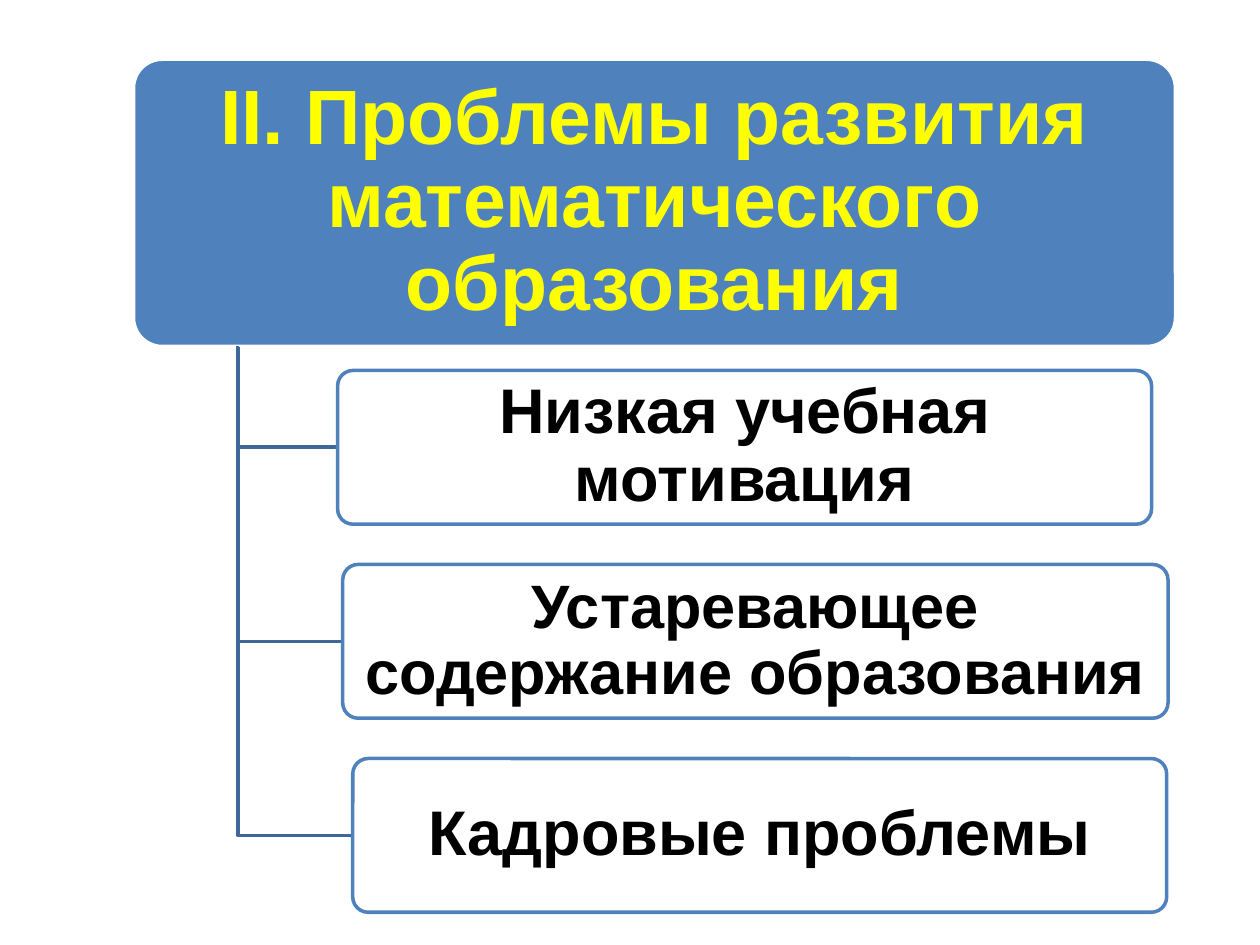
import lxml.etree
import pptx
import pptx.dml.color
import pptx.enum.shapes
import pptx.enum.text
import pptx.oxml.ns
import pptx.util

Inches = pptx.util.Inches
Pt = pptx.util.Pt

COLORS = {
    "white": "FFFFFF",
    "blue": "4F81BD",
    "dark_blue": "3F6797",
    "yellow": "FFFF00",
    "black": "000000",
}


def rgb(name):
    return pptx.dml.color.RGBColor.from_string(COLORS[name])


class ProblemTree:
    font_name = "Arial"
    line_width = Pt(2)
    corner = 0.1
    line_spacing = 0.9

    def __init__(self, presentation):
        self.slide = presentation.slides.add_slide(presentation.slide_layouts[6])

    def outline(self, shape, color):
        shape.shadow.inherit = False
        shape.line.color.rgb = rgb(color)
        shape.line.width = self.line_width

    def box(self, bounds, text, size, fill, line, color, margins, opacity=100):
        shape = self.slide.shapes.add_shape(
            pptx.enum.shapes.MSO_SHAPE.ROUNDED_RECTANGLE,
            *(Inches(length) for length in bounds),
        )
        shape.adjustments[0] = self.corner
        shape.fill.solid()
        shape.fill.fore_color.rgb = rgb(fill)
        if opacity < 100:
            color_element = shape.fill._xPr.find(".//" + pptx.oxml.ns.qn("a:srgbClr"))
            lxml.etree.SubElement(
                color_element, pptx.oxml.ns.qn("a:alpha"), val=str(opacity * 1000)
            )
        self.outline(shape, line)

        horizontal, vertical = (Inches(margin) for margin in margins)
        frame = shape.text_frame
        frame_format = {
            "word_wrap": True,
            "vertical_anchor": pptx.enum.text.MSO_ANCHOR.MIDDLE,
            "margin_left": horizontal,
            "margin_right": horizontal,
            "margin_top": vertical,
            "margin_bottom": vertical,
        }
        for name, value in frame_format.items():
            setattr(frame, name, value)

        paragraph = frame.paragraphs[0]
        paragraph.alignment = pptx.enum.text.PP_ALIGN.CENTER
        paragraph.line_spacing = self.line_spacing
        run = paragraph.add_run()
        run.text = text
        font_format = {"name": self.font_name, "size": Pt(size), "bold": True}
        for name, value in font_format.items():
            setattr(run.font, name, value)
        run.font.color.rgb = rgb(color)

    def branch(self, left, top, right, bottom):
        builder = self.slide.shapes.build_freeform(Inches(left), Inches(top))
        corners = [(left, bottom), (right, bottom)]
        builder.add_line_segments(
            [(Inches(x), Inches(y)) for x, y in corners], close=False
        )
        shape = builder.convert_to_shape()
        shape.fill.background()
        self.outline(shape, "dark_blue")


def main():
    presentation = pptx.Presentation()
    presentation.slide_width = Inches(10)
    presentation.slide_height = Inches(7.5)
    tree = ProblemTree(presentation)

    title_left, title_top, title_width, title_height = 1.06, 0.47, 8.27, 2.28
    tree.box(
        (title_left, title_top, title_width, title_height),
        "II. Проблемы развития математического образования",
        44, "blue", "white", "yellow", (0.09, 0.06),
    )

    trunk_left = title_left + title_width / 10
    trunk_top = title_top + title_height
    first_top, pitch, height = 2.94, 1.54, 1.22
    problems = [
        (2.68, 6.46, 36, "Низкая учебная мотивация"),
        (2.72, 6.55, 35, "Устаревающее содержание образования"),
        (2.8, 6.46, 36, "Кадровые проблемы"),
    ]
    for index, (left, width, size, text) in enumerate(problems):
        top = first_top + index * pitch
        tree.branch(trunk_left, trunk_top, left, top + height / 2)
        tree.box(
            (left, top, width, height),
            text, size, "white", "blue", "black", (0.07, 0.05), opacity=90,
        )

    presentation.save("out.pptx")


if __name__ == "__main__":
    main()
